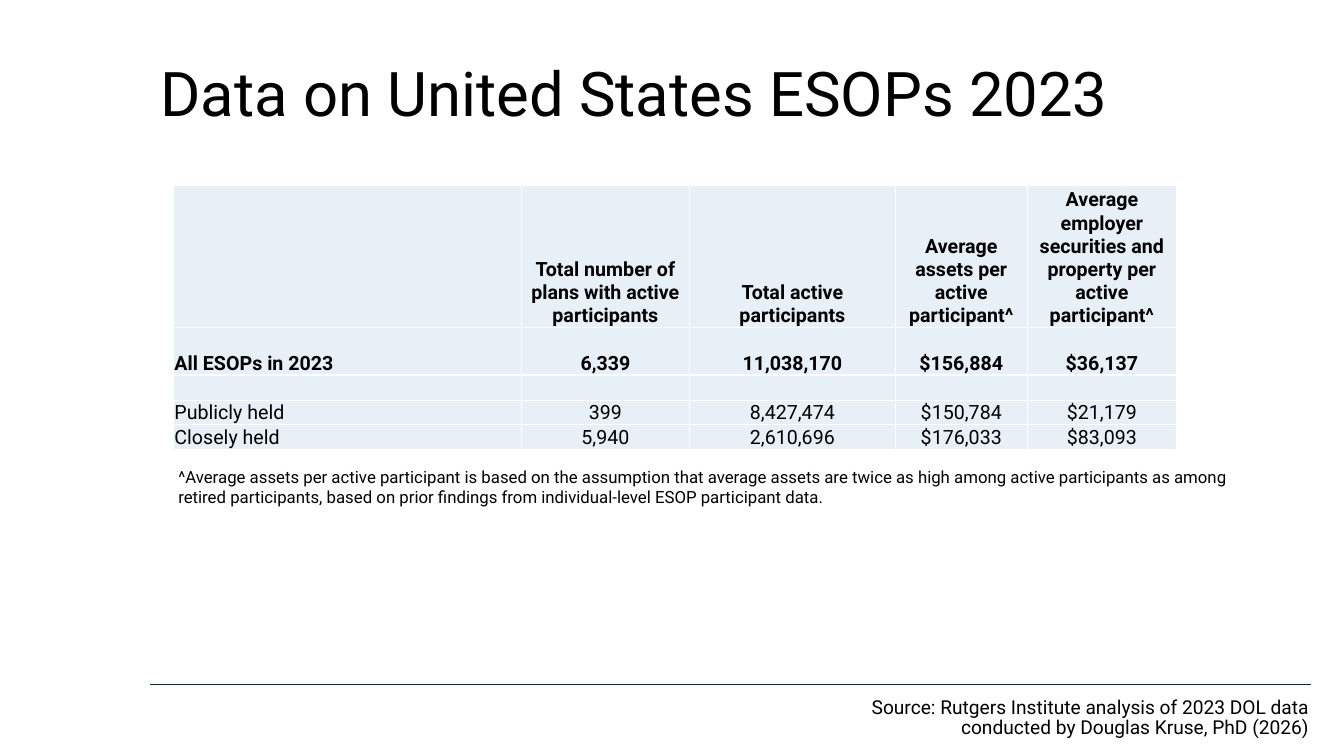
from lxml import etree
from pptx import Presentation
from pptx.dml.color import RGBColor
from pptx.enum.shapes import MSO_CONNECTOR
from pptx.enum.text import MSO_ANCHOR, PP_ALIGN
from pptx.oxml.ns import qn
from pptx.util import Inches, Pt

FONT = "Roboto"
BLACK = RGBColor(0x00, 0x00, 0x00)
WHITE = RGBColor(0xFF, 0xFF, 0xFF)
NAVY = RGBColor(0x0E, 0x28, 0x41)
PALE_BLUE = RGBColor(0xE7, 0xF0, 0xF7)

TITLE = "Data on United States ESOPs 2023"
ROWS = [
    ("", "Total number of plans with active participants",
     "Total active participants", "Average assets per active participant^",
     "Average employer securities and property per active participant^"),
    ("All ESOPs in 2023", "6,339", "11,038,170", "$156,884", "$36,137"),
    ("", "", "", "", ""),
    ("Publicly held", "399", "8,427,474", "$150,784", "$21,179"),
    ("Closely held", "5,940", "2,610,696", "$176,033", "$83,093"),
]
BOLD_ROWS = 2
COL_WIDTHS = [3.45, 1.67, 2.04, 1.31, 1.48]
ROW_HEIGHTS = [1.39, 0.47, 0.25, 0.24, 0.24]
NOTE = ("^Average assets per active participant is based on the assumption that "
        "average assets are twice as high among active participants as among "
        "retired participants, based on prior findings from individual-level "
        "ESOP participant data.")
SOURCE = ["Source: Rutgers Institute analysis of 2023 DOL data",
          "conducted by Douglas Kruse, PhD (2026)"]


def write(tf, lines, size, bold=False, align=PP_ALIGN.LEFT, spacing=None):
    tf.word_wrap = True
    for i, line in enumerate(lines):
        p = tf.paragraphs[0] if i == 0 else tf.add_paragraph()
        p.alignment = align
        p.line_spacing = spacing
        if not line:
            etree.SubElement(p._p, qn("a:endParaRPr"), sz=str(size * 100))
            continue
        r = p.add_run()
        r.text = line
        r.font.name = FONT
        r.font.size = Pt(size)
        r.font.bold = bold
        r.font.color.rgb = BLACK


def add_borders(cell):
    tc_pr = cell._tc.get_or_add_tcPr()
    for i, side in enumerate(("lnL", "lnR", "lnT", "lnB")):
        ln = etree.Element(qn(f"a:{side}"), w=str(Pt(1)))
        fill = etree.SubElement(ln, qn("a:solidFill"))
        etree.SubElement(fill, qn("a:srgbClr"), val=str(WHITE))
        tc_pr.insert(i, ln)


def add_table(slide):
    frame = slide.shapes.add_table(
        len(ROWS), len(COL_WIDTHS), Inches(1.72), Inches(1.84),
        Inches(sum(COL_WIDTHS)), Inches(sum(ROW_HEIGHTS)))
    table = frame.table
    table.first_row = table.horz_banding = False
    for col, width in zip(table.columns, COL_WIDTHS):
        col.width = Inches(width)
    for row, height in zip(table.rows, ROW_HEIGHTS):
        row.height = Inches(height)
    for r, values in enumerate(ROWS):
        for c, value in enumerate(values):
            cell = table.cell(r, c)
            cell.margin_left = cell.margin_right = cell.margin_top = Inches(0.01)
            cell.margin_bottom = 0
            cell.vertical_anchor = MSO_ANCHOR.BOTTOM
            cell.fill.solid()
            cell.fill.fore_color.rgb = PALE_BLUE
            add_borders(cell)
            write(cell.text_frame, [value], 14, bold=r < BOLD_ROWS,
                  align=PP_ALIGN.CENTER if c else PP_ALIGN.LEFT)


def main():
    prs = Presentation()
    prs.slide_width, prs.slide_height = Inches(13.33), Inches(7.5)
    slide = prs.slides.add_slide(prs.slide_layouts[5])

    rule = slide.shapes.add_connector(
        MSO_CONNECTOR.STRAIGHT, Inches(1.49), Inches(6.79), Inches(13), Inches(6.79))
    rule.line.color.rgb = NAVY
    rule.line.width = Pt(0.75)
    etree.SubElement(rule._element.spPr, qn("a:effectLst"))

    title = slide.shapes.title
    title.left, title.top = Inches(1.49), Inches(0.49)
    title.width, title.height = Inches(11.45), Inches(0.93)
    title.text_frame.vertical_anchor = MSO_ANCHOR.MIDDLE
    write(title.text_frame, [TITLE], 44, spacing=0.9)

    source = slide.shapes.add_textbox(
        Inches(1.63), Inches(6.66), Inches(11.45), Inches(0.93))
    source.text_frame.vertical_anchor = MSO_ANCHOR.MIDDLE
    write(source.text_frame, SOURCE, 13.7, align=PP_ALIGN.RIGHT, spacing=0.9)

    add_table(slide)

    note = slide.shapes.add_textbox(
        Inches(1.67), Inches(4.58), Inches(10.87), Inches(0.5))
    write(note.text_frame, [NOTE], 12)

    prs.save("out.pptx")


if __name__ == "__main__":
    main()
